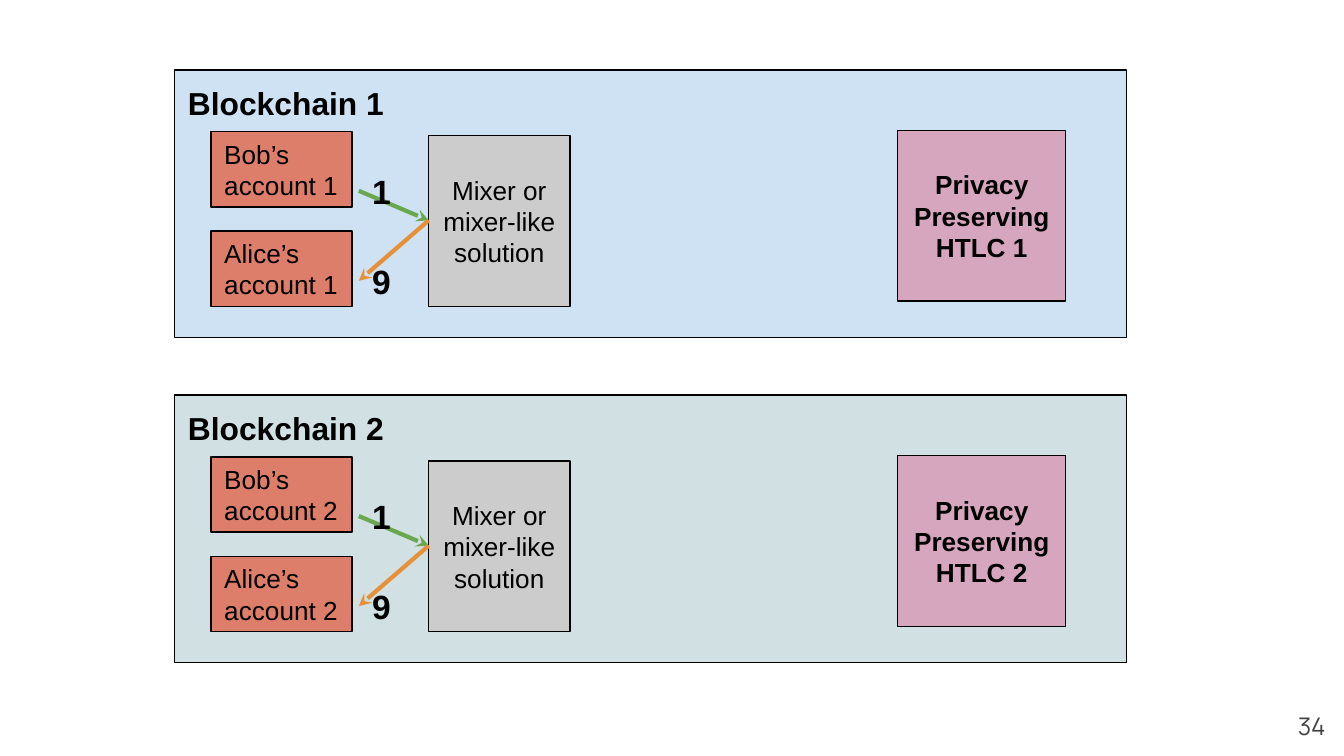
import pptx
import pptx.dml.color
import pptx.enum.shapes
import pptx.enum.text
import pptx.oxml.ns
import pptx.util
from lxml import etree

Inches = pptx.util.Inches
ALIGN = pptx.enum.text.PP_ALIGN
ANCHOR = pptx.enum.text.MSO_ANCHOR
qn = pptx.oxml.ns.qn


def set_color(color_format, value):
    color_format.rgb = pptx.dml.color.RGBColor.from_string(value)


def add_box(text, left, top, width, height, fill=None, size=14, bold=False,
            align=ALIGN.LEFT, anchor=ANCHOR.MIDDLE, font="Arial", color="000000"):
    """Add a bordered rectangle, or a plain text box when fill is None."""
    bounds = [Inches(length) for length in (left, top, width, height)]
    if fill is None:
        shape = slide.shapes.add_textbox(*bounds)
    else:
        shape = slide.shapes.add_shape(pptx.enum.shapes.MSO_SHAPE.RECTANGLE, *bounds)
        shape.shadow.inherit = False
        shape.fill.solid()
        set_color(shape.fill.fore_color, fill)
        shape.line.fill.solid()
        set_color(shape.line.fill.fore_color, "000000")
        shape.line.width = pptx.util.Pt(0.75)
    frame = shape.text_frame
    frame.word_wrap = True
    frame.vertical_anchor = anchor
    frame.margin_left = frame.margin_right = Inches(0.1)
    frame.margin_top = frame.margin_bottom = Inches(0.1)
    frame.text = text
    for paragraph in frame.paragraphs:
        paragraph.alignment = align
        for run in paragraph.runs:
            run.font.name = font
            run.font.size = pptx.util.Pt(size)
            run.font.bold = bold
            set_color(run.font.color, color)


presentation = pptx.Presentation()
presentation.slide_width = Inches(10)
presentation.slide_height = Inches(10 * 9 / 16)
slide = presentation.slides.add_slide(presentation.slide_layouts[6])

add_box("34", 9.36, 5.19, 0.6, 0.43, size=13, align=ALIGN.RIGHT,
        anchor=ANCHOR.TOP, font="Manrope", color="434343")

chains = [(1, 0.52, "CFE2F3"), (2, 2.94, "D0E0E3")]
for number, top, background in chains:
    add_box("", 1.3, top, 7.08, 1.99, fill=background)
    add_box(f"Blockchain {number}", 1.3, top, 2.82, 0.49, size=17, bold=True,
            anchor=ANCHOR.TOP)

    for owner, offset in (("Bob", 0.46), ("Alice", 1.2)):
        add_box(f"{owner}’s account {number}", 1.57, top + offset, 1.05, 0.56,
                fill="DD7E6B")
    add_box("Mixer or mixer-like\nsolution", 3.19, top + 0.49, 1.05, 1.27,
            fill="CCCCCC", align=ALIGN.CENTER)
    add_box(f"Privacy Preserving\nHTLC {number}", 6.68, top + 0.45, 1.25, 1.27,
            fill="D5A6BD", bold=True, align=ALIGN.CENTER)

    # Step 1 goes into the mixer, step 9 comes back to the account.
    steps = [("1", 0.9, "6AA84F", "a:tailEnd"), ("9", 1.57, "E69138", "a:headEnd")]
    for step, offset, color, arrow_end in steps:
        arrow = slide.shapes.add_connector(
            pptx.enum.shapes.MSO_CONNECTOR.STRAIGHT,
            Inches(2.67), Inches(top + offset), Inches(3.19), Inches(top + 1.12))
        arrow.line.fill.solid()
        set_color(arrow.line.fill.fore_color, color)
        arrow.line.width = pptx.util.Pt(2.25)
        properties = arrow._element.spPr
        etree.SubElement(properties.find(qn("a:ln")), qn(arrow_end), type="stealth")
        etree.SubElement(properties, qn("a:effectLst"))
        add_box(step, 2.67, top + offset - 0.25, 0.29, 0.5, size=18, bold=True,
                anchor=ANCHOR.TOP)

presentation.save("out.pptx")
